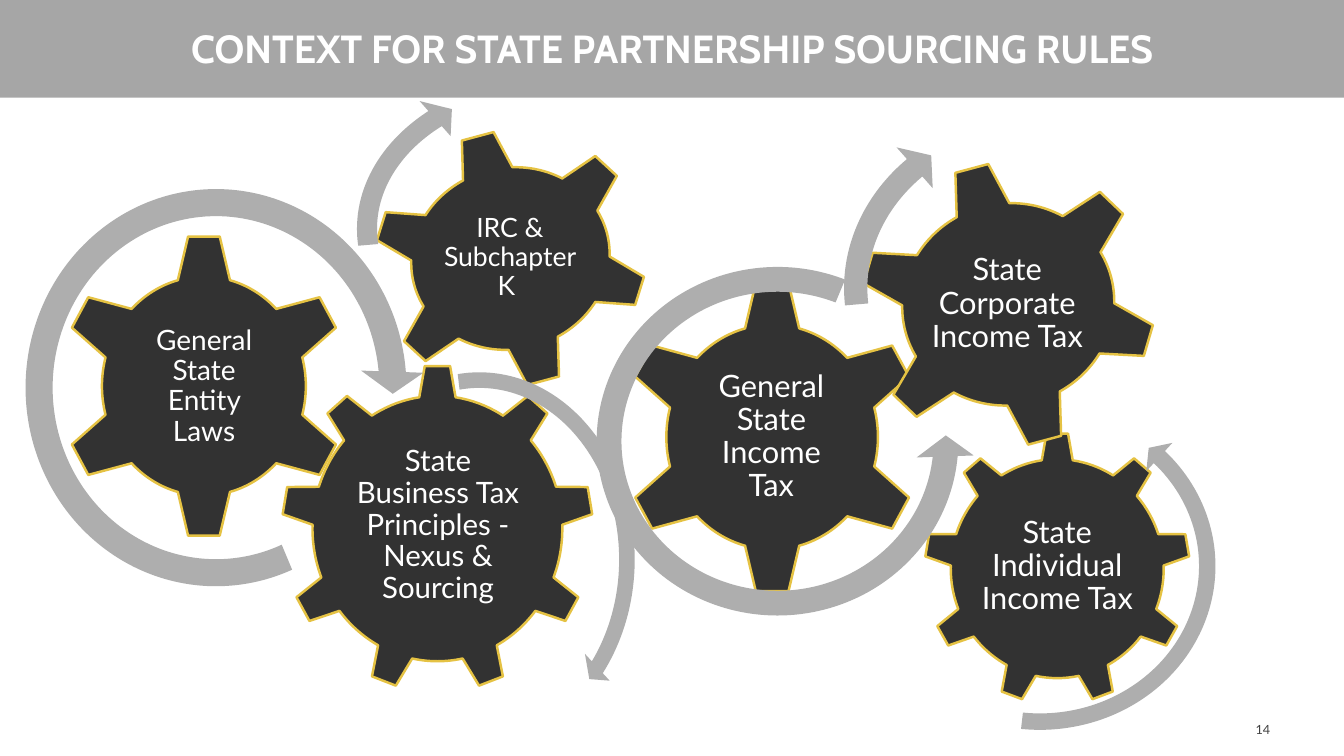
from pptx import Presentation
from pptx.dml.color import RGBColor
from pptx.enum.shapes import MSO_SHAPE
from pptx.enum.text import MSO_ANCHOR, PP_ALIGN
from pptx.util import Cm, Pt

RECT, ARROW = MSO_SHAPE.RECTANGLE, MSO_SHAPE.CIRCULAR_ARROW
GEAR6, GEAR9 = MSO_SHAPE.GEAR_6, MSO_SHAPE.GEAR_9
MIDDLE = MSO_ANCHOR.MIDDLE
CENTER, RIGHT = PP_ALIGN.CENTER, PP_ALIGN.RIGHT

TITLE = "CONTEXT FOR STATE PARTNERSHIP SOURCING RULES"
PAGE = "14"
WHITE, BAND, DARK, GOLD, SILVER, GREY = "FFFFFF", "A6A6A6", "323232", "E5C243", "AEAEAE", "404040"

LOWER = (0.047, 2.99, 25.44, 158.02, 0.055)
LEFT = (0.065, 4.3, 104.89, 148.38, 0.075)
UPPER = (0.06, 3.94, 133.14, 105.08, 0.07)

TRAINS = [
    {
        "gears": [
            (GEAR9, (7.09, 9.19, 7.87, 8.26), 0,
             "State Business Tax Principles - Nexus & Sourcing", (8.69, 11.1, 4.7, 4.29), 21),
            (GEAR6, (1.47, 5.87, 7.34, 7.72), 0,
             "General State Entity Laws", (3.33, 7.8, 3.63, 3.89), 20),
            (GEAR6, (9.37, 3.25, 6.99, 6.53), 345,
             "IRC & Subchapter K ", (10.92, 4.65, 3.86, 3.71), 19),
        ],
        "arrows": [
            ((7.9, 9.12, 8.36, 9.96), LOWER, ()),
            ((0.2, 4.32, 10.49, 10.9), LEFT, ("flipH", "flipV")),
            ((8.66, 1.55, 10.8, 8.43), UPPER, ()),
        ],
    },
    {
        "gears": [
            (GEAR9, (23.29, 10.9, 6.71, 6.86), 0,
             "State Individual Income Tax", (24.64, 12.5, 4.01, 3.56), 22),
            (GEAR6, (15.65, 7.04, 7.62, 7.95), 0,
             "General State Income Tax", (17.55, 9.02, 3.78, 3.99), 22),
            (GEAR6, (21.64, 4.04, 7.54, 7.26), 345,
             "State Corporate Income Tax", (23.29, 5.61, 4.19, 4.11), 22),
        ],
        "arrows": [
            ((21.51, 9.86, 9.4, 8.81), LOWER, ("flipV",)),
            ((14.63, 6.32, 9.93, 9.6), LEFT, ("flipH",)),
            ((20.88, 2.36, 11.1, 9.8), UPPER, ()),
        ],
    },
]


def rgb(color):
    return RGBColor.from_string(color)


def add_preset(shapes, kind, at, fill, line=None):
    sp = shapes.add_shape(kind, *map(Cm, at))
    sp.shadow.inherit = False
    sp.fill.solid()
    sp.fill.fore_color.rgb = rgb(fill)
    if line:
        sp.line.color.rgb = rgb(line)
        sp.line.width = Pt(1.75)
    else:
        sp.line.fill.background()
    return sp


def write(sp, text, size, font="Lato", color=WHITE, bold=False, align=CENTER, spacing=None, inset=None):
    tf = sp.text_frame
    tf.word_wrap = True
    tf.vertical_anchor = MIDDLE
    if inset is not None:
        tf.margin_left = tf.margin_right = tf.margin_top = tf.margin_bottom = Cm(inset)
    p = tf.paragraphs[0]
    p.alignment = align
    if spacing:
        p.line_spacing = spacing
    r = p.add_run()
    r.text = text
    r.font.name = font
    r.font.size = Pt(size)
    r.font.bold = bold
    r.font.color.rgb = rgb(color)


prs = Presentation()
prs.slide_width, prs.slide_height = Cm(33.87), Cm(19.05)
s = prs.slides.add_slide(prs.slide_layouts[6])

title = add_preset(s.shapes, RECT, (0, -0.03, 33.87, 2.49), BAND)
write(title, TITLE, 28, font="Cabin", bold=True)

for train in TRAINS:
    group = s.shapes.add_group_shape()
    for kind, at, rotation, label, label_at, size in train["gears"]:
        gear = add_preset(group.shapes, kind, at, DARK, GOLD)
        gear.rotation = rotation
        tb = group.shapes.add_textbox(*map(Cm, label_at))
        write(tb, label, size, spacing=0.9, inset=0.08)
    for at, adjustments, flips in train["arrows"]:
        arrow = add_preset(group.shapes, ARROW, at, SILVER)
        for i, value in enumerate(adjustments):
            arrow.adjustments[i] = value
        for flip in flips:
            arrow.element.spPr.get_or_add_xfrm().set(flip, "1")

number = s.shapes.add_textbox(Cm(29.34), Cm(17.86), Cm(2.92), Cm(1.02))
write(number, PAGE, 9, color=GREY, align=RIGHT)

prs.save("out.pptx")
